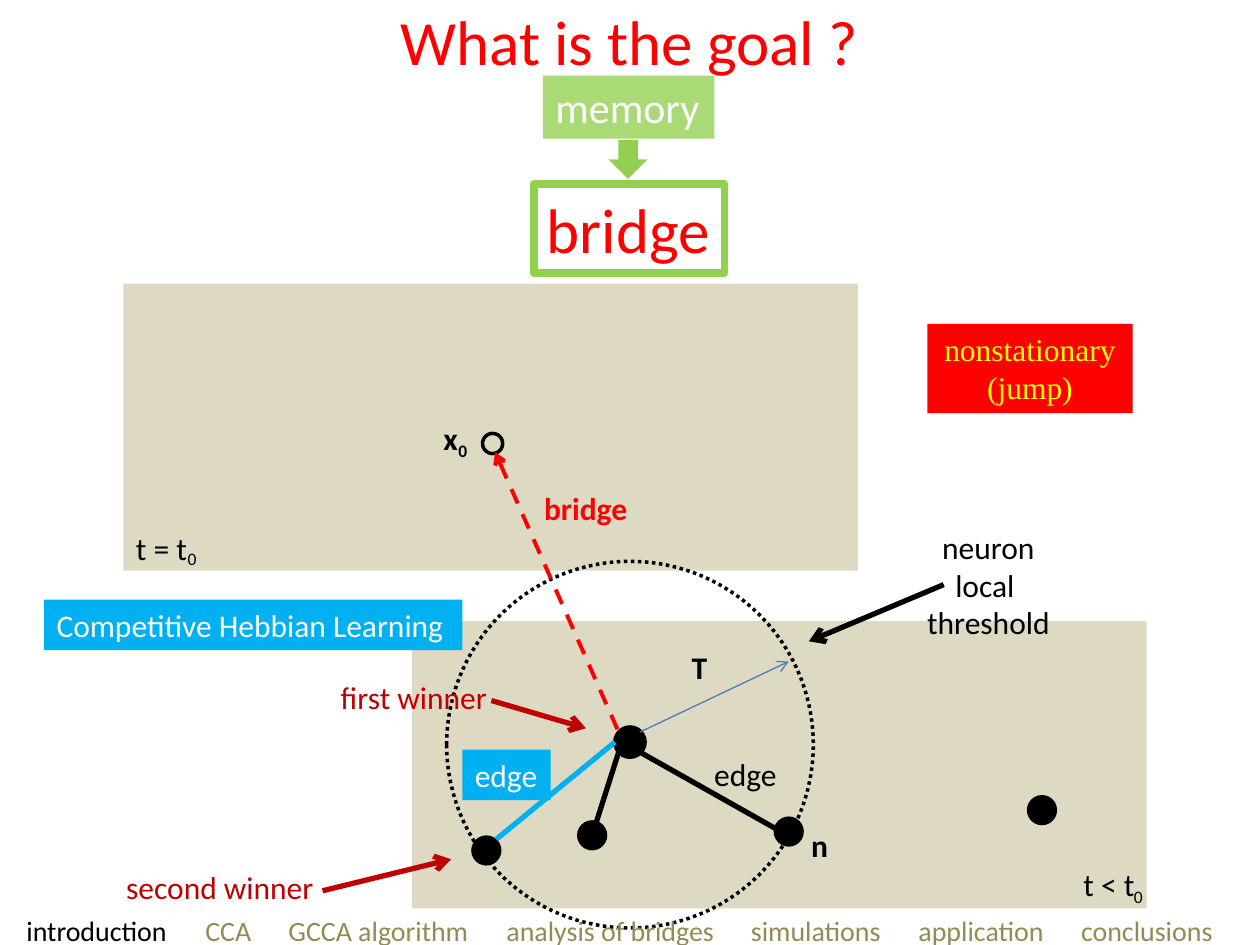
from lxml import etree
from pptx import Presentation
from pptx.dml.color import RGBColor
from pptx.enum import dml, shapes, text
from pptx.oxml.ns import qn
from pptx.util import Inches, Pt

HUE = dict(black="000000", white="FFFFFF", red="FF0000", yellow="FFFF00",
           green="92D050", sand="DDD9C3", olive="948A54", wine="C00000",
           sky="00B0F0", steel="4B7EBC")
KIND = shapes.MSO_SHAPE
DASH = dml.MSO_LINE

TITLE = "What is the goal ?"
PANELS = [(0.98, 2.25), (3.27, 4.93)]
PANEL_W, PANEL_H = 5.83, 2.28
NEURONS = [(4.7, 6.63), (6.26, 6.6), (3.86, 6.75), (8.27, 6.43)]
WINNER = (5, 5.89)

# start, end, colour, width, format
LINES = [
    ((5.08, 5.97), (6.34, 6.68), "black", 3, {}),
    ((4.91, 5.97), (4.69, 6.66), "black", 3, {}),
    ((3.94, 6.66), (4.88, 5.89), "sky", 3, {}),
    ((5.08, 5.81), (6.26, 5.25), "steel", 0.75, dict(tip="tailEnd")),
    ((7.49, 4.64), (6.42, 5.09), "black", 3, dict(tip="tailEnd")),
    ((3.9, 5.56), (4.65, 5.78), "wine", 3, dict(tip="tailEnd")),
    ((2.56, 7.07), (3.58, 6.82), "wine", 3, dict(tip="tailEnd")),
    ((3.93, 3.59), (4.91, 5.81), "red", 2.25,
     dict(tip="headEnd", dash=DASH.DASH)),
]

# text, (left, top, width, height), format
LABELS = [
    ("memory", (4.31, 0.6, 1.36, 0.5),
     dict(size=24, hue="white", fill="green", alpha=78)),
    ("bridge", (4.24, 1.46, 1.51, 0.71),
     dict(size=36, hue="red", edge="green")),
    ("nonstationary\n(jump)", (7.36, 2.57, 1.63, 0.71),
     dict(hue="yellow", fill="red", face="Times New Roman", mid=True)),
    ("t = t", (0.98, 4.15, 0.61, 0.4), {}),
    ("0", (1.39, 4.3, 0.27, 0.27), dict(size=10)),
    ("t < t", (8.5, 6.82, 0.61, 0.4), {}),
    ("0", (8.9, 6.98, 0.27, 0.27), dict(size=10)),
    ("x", (3.42, 3.28, 0.32, 0.4), dict(bold=True)),
    ("0", (3.54, 3.44, 0.27, 0.27), dict(size=10, bold=True)),
    ("bridge", (4.22, 3.83, 0.86, 0.4), dict(hue="red", bold=True)),
    ("T", (5.39, 5.09, 0.33, 0.4), dict(bold=True)),
    ("n", (6.34, 6.51, 0.34, 0.4), dict(bold=True)),
    ("edge", (5.57, 5.94, 0.7, 0.4), {}),
    ("edge", (3.67, 5.95, 0.7, 0.4), dict(hue="white", fill="sky")),
    ("Competitive Hebbian Learning", (0.35, 4.76, 3.32, 0.4),
     dict(hue="white", fill="sky", wrap=True)),
    ("neuron\nlocal \nthreshold", (6.88, 4.14, 1.93, 1.01),
     dict(mid=True, wrap=True)),
    ("first winner", (2.32, 5.33, 1.93, 0.4),
     dict(hue="wine", mid=True, wrap=True)),
    ("second winner", (0.78, 6.84, 1.93, 0.4),
     dict(hue="wine", mid=True, wrap=True)),
]

NAV_LEFT = 0.21
NAV = [("introduction", 0.21), ("CCA", 1.63), ("GCCA algorithm", 2.29),
       ("analysis of bridges", 4.02), ("simulations", 5.96),
       ("application", 7.29), ("conclusions", 8.58)]

deck = Presentation()
deck.slide_width, deck.slide_height = Inches(10), Inches(7.5)
page = deck.slides.add_slide(deck.slide_layouts[5])


def rgb(hue):
    return RGBColor.from_string(HUE[hue])


def paint(item, fill=None, edge=None, width=2, dash=None, alpha=None):
    if fill:
        item.fill.solid()
        item.fill.fore_color.rgb = rgb(fill)
        if alpha:
            tint = item.fill._xPr.find(".//" + qn("a:srgbClr"))
            etree.SubElement(tint, qn("a:alpha")).set("val", str(alpha * 1000))
    else:
        item.fill.background()
    if edge:
        item.line.color.rgb = rgb(edge)
        item.line.width = Pt(width)
        if dash:
            item.line.dash_style = dash
    else:
        item.line.fill.background()


def shape(kind, spot, **look):
    item = page.shapes.add_shape(kind, *map(Inches, spot))
    item.shadow.inherit = False
    paint(item, **look)
    return item


def disc(mid, size, **look):
    return shape(KIND.OVAL, (mid[0] - size / 2, mid[1] - size / 2, size, size),
                 **look)


def style(font, size, hue, face="Calibri", bold=False):
    font.size, font.name, font.bold = Pt(size), face, bold
    font.color.rgb = rgb(hue)


def write(item, words, size=18, hue="black", face="Calibri", bold=False,
          mid=False, wrap=False):
    frame = item.text_frame
    frame.word_wrap = wrap
    frame.auto_size = text.MSO_AUTO_SIZE.SHAPE_TO_FIT_TEXT
    frame.vertical_anchor = text.MSO_ANCHOR.TOP
    frame.text = words
    for para in frame.paragraphs:
        para.alignment = text.PP_ALIGN.CENTER if mid else text.PP_ALIGN.LEFT
        for run in para.runs:
            style(run.font, size, hue, face, bold)


def label(words, spot, fill=None, edge=None, alpha=None, **form):
    if fill or edge:
        item = shape(KIND.RECTANGLE, spot, fill=fill, edge=edge, width=4.5,
                     alpha=alpha)
    else:
        item = page.shapes.add_textbox(*map(Inches, spot))
    write(item, words, **form)


def line(start, end, hue, width, tip=None, dash=None):
    item = page.shapes.add_connector(shapes.MSO_CONNECTOR.STRAIGHT,
                                     *map(Inches, start + end))
    item.line.color.rgb = rgb(hue)
    item.line.width = Pt(width)
    if dash:
        item.line.dash_style = dash
    if tip:
        etree.SubElement(item.line._get_or_add_ln(),
                         qn("a:" + tip)).set("type", "arrow")
    etree.SubElement(item._element.spPr, qn("a:effectLst"))


def menu():
    """Footer line with one tab stop for each section name."""
    item = page.shapes.add_textbox(*map(Inches, (0, 7.2, 10, 0.37)))
    frame = item.text_frame
    frame.word_wrap = True
    frame.margin_left, frame.margin_right = Inches(NAV_LEFT), 0
    para = frame.paragraphs[0]
    tabs = etree.SubElement(para._p.get_or_add_pPr(), qn("a:tabLst"))
    for i, (name, left) in enumerate(NAV):
        if i:
            stop = etree.SubElement(tabs, qn("a:tab"))
            stop.set("pos", str(Inches(left - NAV_LEFT)))
            stop.set("algn", "l")
        run = para.add_run()
        run.text = "\t" + name if i else name
        style(run.font, 16, "olive" if i else "black")


def main():
    head = page.shapes.title
    head.left, head.top, head.width, head.height = map(
        Inches, (3.06, -0.03, 3.87, 0.71))
    write(head, TITLE, size=36, hue="red", mid=True)

    for spot in PANELS:
        shape(KIND.RECTANGLE, spot + (PANEL_W, PANEL_H), fill="sand")
    shape(KIND.DOWN_ARROW, (4.83, 1.11, 0.31, 0.31), fill="green")
    for mid in NEURONS:
        disc(mid, 0.24, fill="black")
    disc((5, 5.91), 2.91, edge="black", dash=DASH.ROUND_DOT)
    disc(WINNER, 0.24, fill="black", edge="black")
    disc((3.91, 3.52), 0.16, edge="black")
    for row in LINES:
        line(*row[:4], **row[4])
    for words, spot, form in LABELS:
        label(words, spot, **form)
    menu()
    deck.save("out.pptx")


if __name__ == "__main__":
    main()
